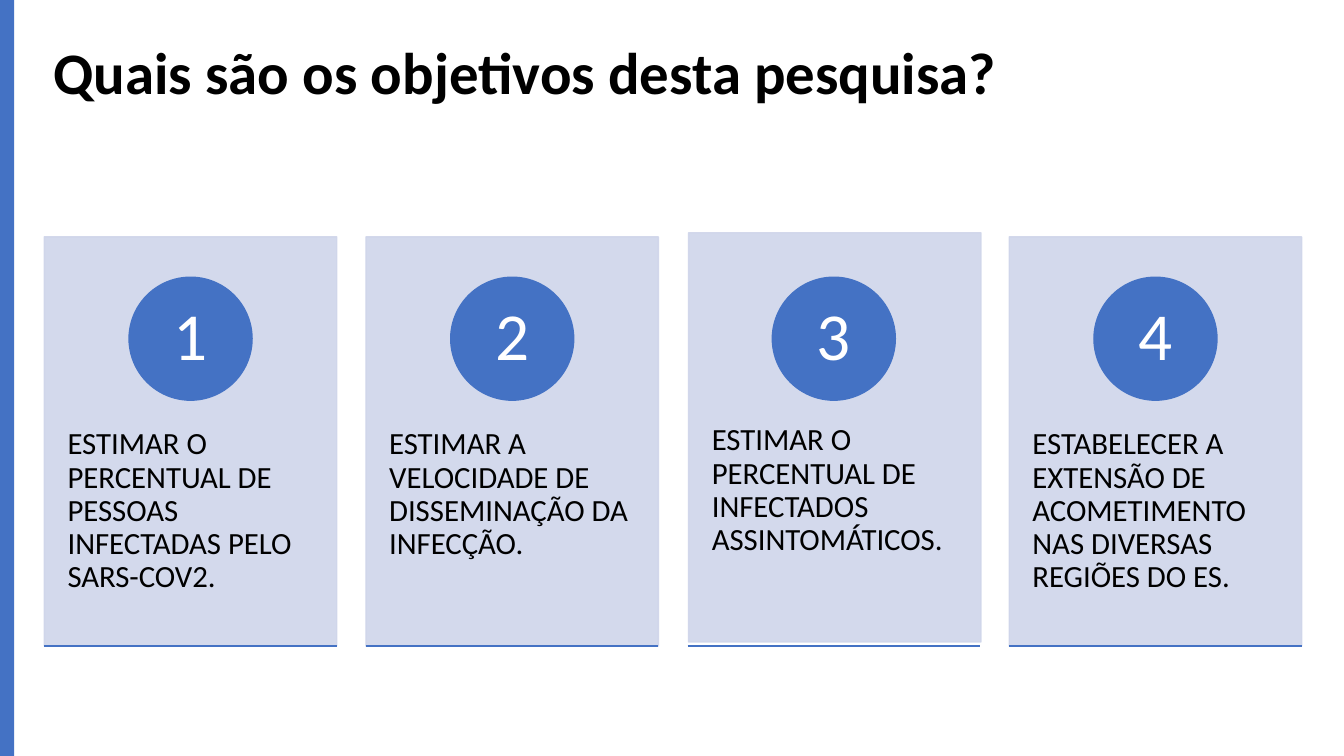
import pptx
import pptx.dml.color
import pptx.enum.shapes
import pptx.enum.text
import pptx.oxml.ns
import pptx.util
from lxml import etree

Inches = pptx.util.Inches
Pt = pptx.util.Pt
RGBColor = pptx.dml.color.RGBColor
SHAPE = pptx.enum.shapes.MSO_SHAPE
ANCHOR = pptx.enum.text.MSO_ANCHOR
ALIGN = pptx.enum.text.PP_ALIGN
qn = pptx.oxml.ns.qn

BLUE = RGBColor(0x44, 0x72, 0xC4)
LAVENDER = RGBColor(0xCF, 0xD5, 0xEA)
BLACK = RGBColor(0, 0, 0)
WHITE = RGBColor(0xFF, 0xFF, 0xFF)

CARD_LEFT, CARD_TOP, CARD_PITCH = 0.44, 2.35, 3.19
CARD_WIDTH, CARD_HEIGHT = 2.9, 4.06
CIRCLE_SIZE = 1.22
OBJECTIVES = [
    ("ESTIMAR O PERCENTUAL DE PESSOAS INFECTADAS PELO SARS-COV2.", 0, 0),
    ("ESTIMAR A VELOCIDADE DE DISSEMINAÇÃO DA INFECÇÃO.", 0, 0),
    ("ESTIMAR O PERCENTUAL DE INFECTADOS ASSINTOMÁTICOS.", 0.01, -0.04),
    ("ESTABELECER A EXTENSÃO DE ACOMETIMENTO NAS DIVERSAS REGIÕES DO ES.", 0, 0),
]


def set_attributes(obj, values):
    for name, value in values.items():
        setattr(obj, name, value)


def write_text(sp, text, font, frame, align=ALIGN.LEFT):
    tf = sp.text_frame
    set_attributes(tf, {"word_wrap": True, **frame})
    p = tf.paragraphs[0]
    set_attributes(p, {"alignment": align, "line_spacing": 0.9})
    r = p.add_run()
    r.text = text
    set_attributes(r.font, {"name": "Calibri", **font})


def add_text(s, box, text, size, frame, bold=False):
    sp = s.shapes.add_textbox(*map(Inches, box))
    write_text(sp, text, {"size": Pt(size), "bold": bold}, frame)
    sp.text_frame.paragraphs[0].runs[0].font.color.rgb = BLACK


def add_filled(s, kind, box, color, outlined=True):
    sp = s.shapes.add_shape(kind, *map(Inches, box))
    sp.shadow.inherit = False
    sp.fill.solid()
    sp.fill.fore_color.rgb = color
    if outlined:
        sp.line.color.rgb = color
        sp.line.width = Pt(1)
    else:
        sp.line.fill.background()
    return sp


def set_opacity(sp, percent):
    for clr in sp._element.spPr.iter(qn("a:srgbClr")):
        etree.SubElement(clr, qn("a:alpha")).set("val", str(percent * 1000))


def add_number(s, left, number):
    box = (left, 2.75, CIRCLE_SIZE, CIRCLE_SIZE)
    sp = add_filled(s, SHAPE.OVAL, box, BLUE)
    frame = {"vertical_anchor": ANCHOR.MIDDLE,
             "margin_left": Inches(0.09), "margin_right": Inches(0.09),
             "margin_top": Inches(0.01), "margin_bottom": Inches(0.01)}
    write_text(sp, str(number), {"size": Pt(48)}, frame, ALIGN.CENTER)
    sp.text_frame.paragraphs[0].runs[0].font.color.rgb = WHITE


def add_base_line(s, left, top):
    ends = (left, top, left + CARD_WIDTH, top)
    line = s.shapes.add_connector(
        pptx.enum.shapes.MSO_CONNECTOR.STRAIGHT, *map(Inches, ends))
    line.line.color.rgb = BLUE
    line.line.width = Pt(1)
    etree.SubElement(line._element.spPr, qn("a:effectLst"))


def add_card(s, index, text, dx, dy):
    left = CARD_LEFT + index * CARD_PITCH
    card_box = (left + dx, CARD_TOP + dy, CARD_WIDTH, CARD_HEIGHT)
    set_opacity(add_filled(s, SHAPE.RECTANGLE, card_box, LAVENDER), 90)
    frame = {"margin_left": Inches(0.23), "margin_right": Inches(0.23),
             "margin_top": Inches(0.36), "margin_bottom": Inches(0.36)}
    add_text(s, (left + dx, 3.89 + dy, CARD_WIDTH, 2.44), text, 22, frame)
    add_number(s, left + (CARD_WIDTH - CIRCLE_SIZE) / 2, index + 1)
    add_base_line(s, left, CARD_TOP + CARD_HEIGHT)


def main():
    prs = pptx.Presentation()
    prs.slide_width, prs.slide_height = Inches(13.33), Inches(7.5)
    s = prs.slides.add_slide(prs.slide_layouts[6])
    add_text(s, (0.43, 0.35, 12.48, 1.45),
             "Quais são os objetivos desta pesquisa?", 42,
             {"margin_top": Inches(0.08)}, bold=True)
    add_filled(s, SHAPE.RECTANGLE, (0, 0, 0.14, 7.5), BLUE, outlined=False)
    for index, (text, dx, dy) in enumerate(OBJECTIVES):
        add_card(s, index, text, dx, dy)
    prs.save("out.pptx")


if __name__ == "__main__":
    main()
